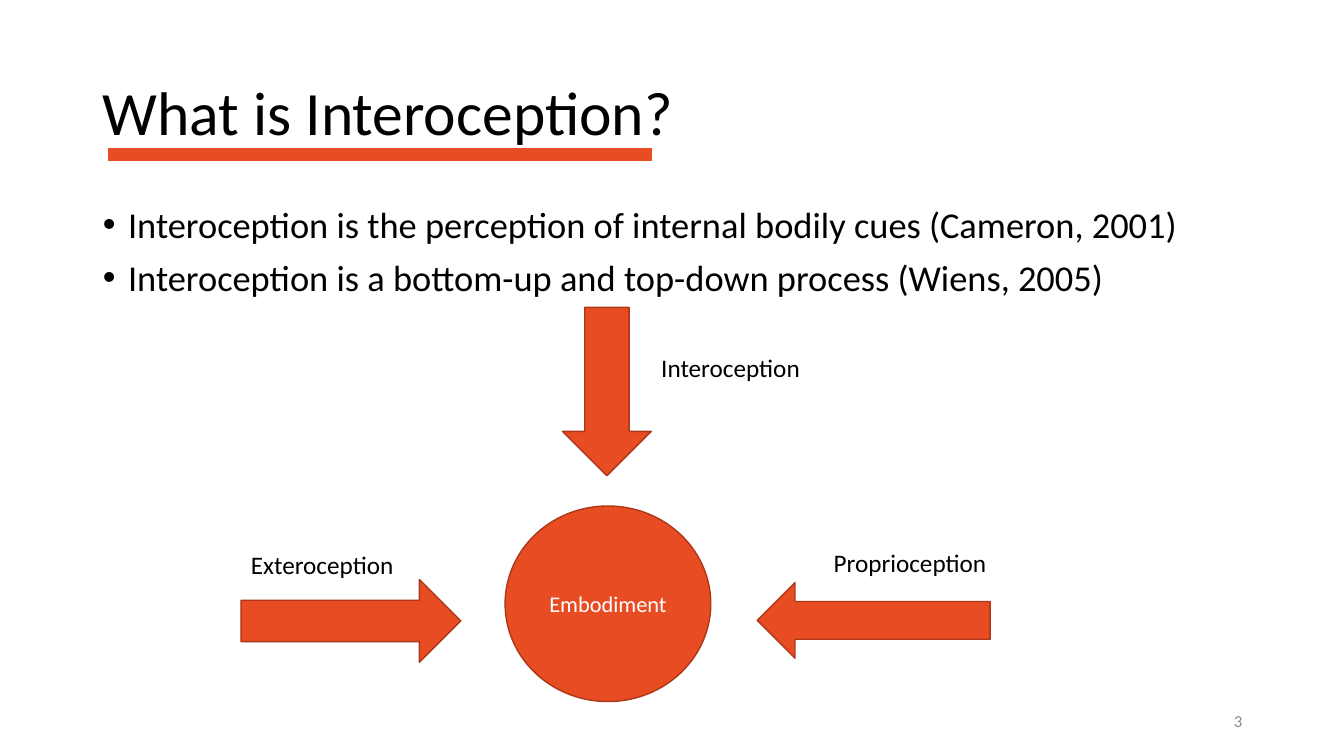
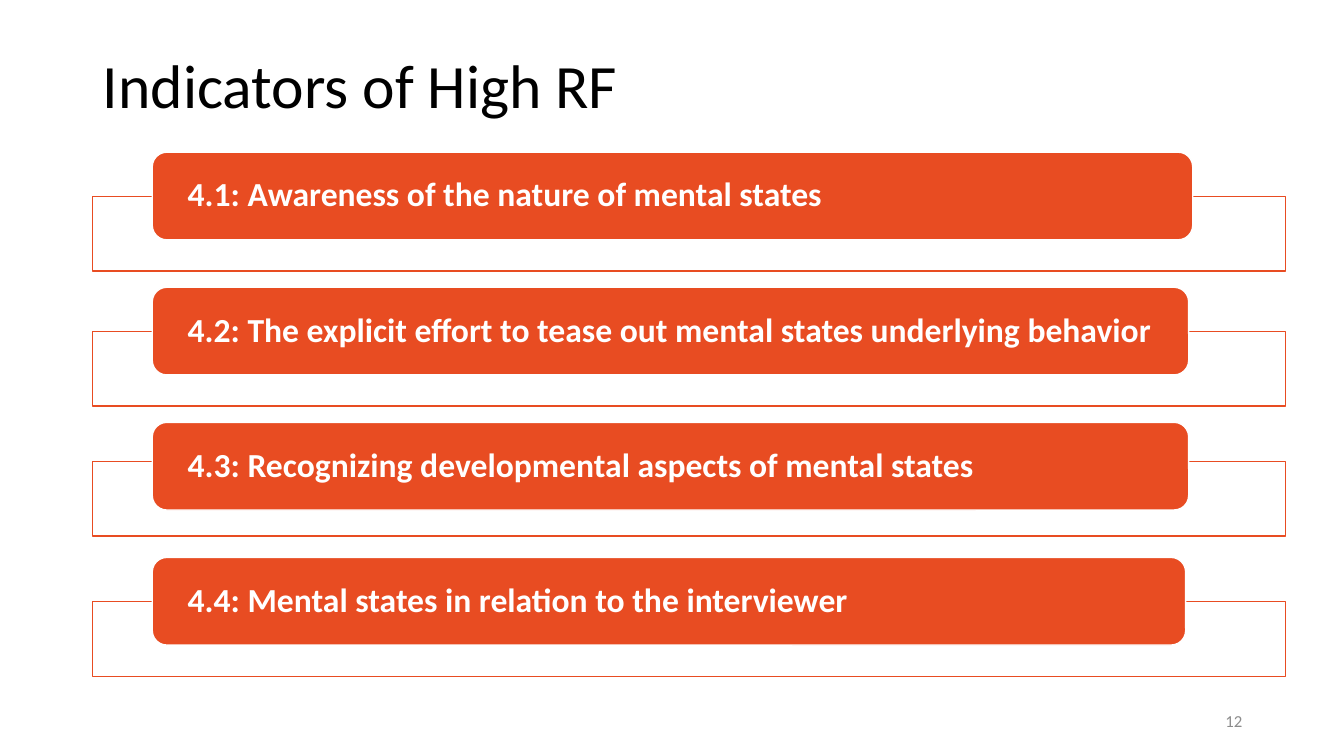
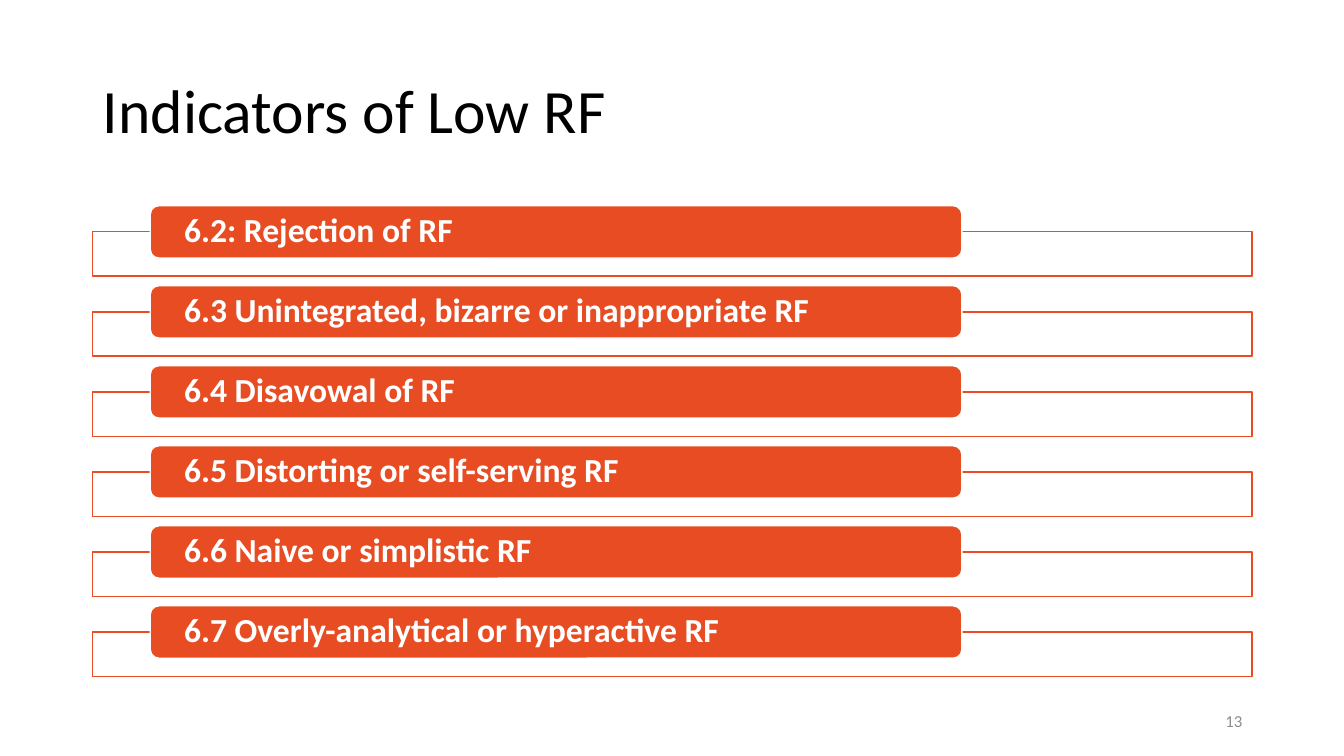
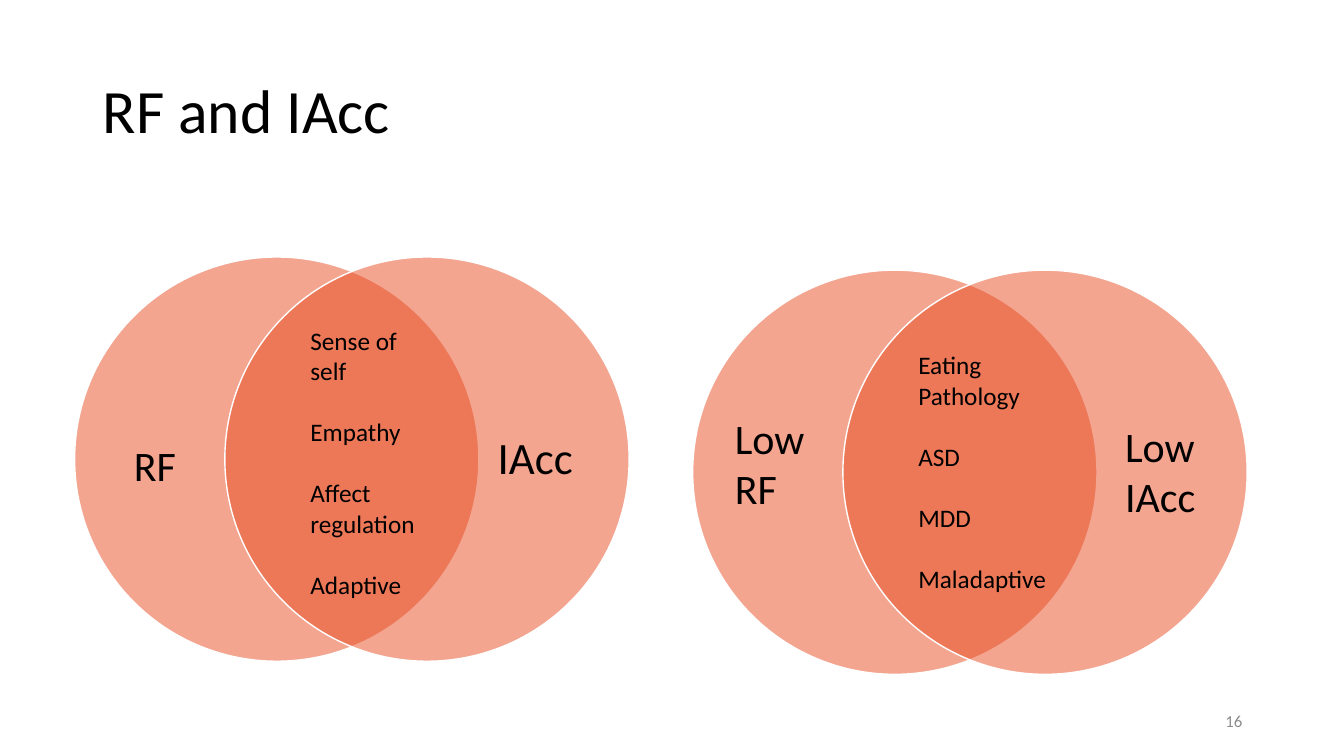
import pptx
import pptx.dml.color
import pptx.enum.shapes
import pptx.enum.text
import pptx.oxml.ns
import pptx.util
from lxml import etree

Inches = pptx.util.Inches
Pt = pptx.util.Pt
Shape = pptx.enum.shapes.MSO_SHAPE
Align = pptx.enum.text.PP_ALIGN
Anchor = pptx.enum.text.MSO_ANCHOR
qn = pptx.oxml.ns.qn


def color(value):
    return pptx.dml.color.RGBColor.from_string(value)


class Deck:
    FONT = "Calibri"
    ACCENT = "E84C22"
    EDGE = "AC3819"
    BLACK = "000000"
    WHITE = "FFFFFF"
    GRAY = "8C8C8C"
    TITLE_ONLY = 5
    TITLE_AND_BODY = 1

    def __init__(self):
        self.presentation = pptx.Presentation()
        self.presentation.slide_width = Inches(13.33)
        self.presentation.slide_height = Inches(7.5)
        self.slide = None

    def new_slide(self, title, number, title_top=0.4, layout=TITLE_ONLY):
        layouts = self.presentation.slide_layouts
        self.slide = self.presentation.slides.add_slide(layouts[layout])
        shape = self.slide.shapes.title
        self.place(shape, 0.92, title_top, 11.5, 1.45)
        self.set_text(shape, [title], 44, anchor=Anchor.MIDDLE, line_spacing=0.9)
        self.text([str(number)], 9.42, 6.95, 3, 0.4, 12, font_color=self.GRAY,
                  align=Align.RIGHT, anchor=Anchor.MIDDLE)

    def place(self, shape, left, top, width, height):
        shape.left, shape.top = Inches(left), Inches(top)
        shape.width, shape.height = Inches(width), Inches(height)

    def set_text(self, shape, lines, size, font_color=BLACK, bold=False,
                 align=Align.LEFT, anchor=Anchor.TOP, line_spacing=1.0,
                 space_before=0, space_after=0):
        frame = shape.text_frame
        frame.text = "\n".join(lines)
        frame.word_wrap = True
        frame.auto_size = pptx.enum.text.MSO_AUTO_SIZE.NONE
        frame.vertical_anchor = anchor
        for paragraph in frame.paragraphs:
            paragraph.alignment = align
            paragraph.line_spacing = line_spacing
            paragraph.space_before = Pt(space_before)
            paragraph.space_after = Pt(space_after)
            for run in paragraph.runs:
                run.font.name = self.FONT
                run.font.size = Pt(size)
                run.font.bold = bold
                run.font.color.rgb = color(font_color)

    def text(self, lines, left, top, width, height, size, **style):
        box = self.slide.shapes.add_textbox(
            Inches(left), Inches(top), Inches(width), Inches(height))
        self.set_text(box, lines, size, **style)

    def bullets(self, lines, left, top, width, height, size):
        body = self.slide.placeholders[1]
        self.place(body, left, top, width, height)
        self.set_text(body, lines, size, line_spacing=0.9, space_before=10)
        for paragraph in body.text_frame.paragraphs:
            properties = paragraph._p.get_or_add_pPr()
            properties.set("marL", str(Inches(0.25)))
            properties.set("indent", str(-Inches(0.25)))
            etree.SubElement(properties, qn("a:buChar")).set("char", "•")

    def shape(self, kind, left, top, width, height, fill=ACCENT, line=EDGE, opacity=100):
        shape = self.slide.shapes.add_shape(
            kind, Inches(left), Inches(top), Inches(width), Inches(height))
        shape.shadow.inherit = False
        shape.fill.solid()
        shape.fill.fore_color.rgb = color(fill)
        shape.line.color.rgb = color(line)
        shape.line.width = Pt(1)
        if opacity < 100:
            fill_color = shape._element.spPr.find(qn("a:solidFill"))[0]
            etree.SubElement(fill_color, qn("a:alpha")).set("val", str(opacity * 1000))
        return shape

    def rule(self, left, top, right, width):
        connector = self.slide.shapes.add_connector(
            pptx.enum.shapes.MSO_CONNECTOR.STRAIGHT,
            Inches(left), Inches(top), Inches(right), Inches(top))
        connector.line.color.rgb = color(self.ACCENT)
        connector.line.width = Pt(width)
        etree.SubElement(connector._element.spPr, qn("a:effectLst"))

    def indicators(self, rows, first_top, last_top, bar_left, bar_height,
                   frame_width, frame_height):
        pitch = (last_top - first_top) / (len(rows) - 1)
        for index, (label, bar_width, frame_drop) in enumerate(rows):
            top = first_top + index * pitch
            self.shape(Shape.RECTANGLE, 0.92, top + frame_drop, frame_width, frame_height,
                       fill=self.WHITE, line=self.ACCENT, opacity=90)
            bar = self.shape(Shape.ROUNDED_RECTANGLE, bar_left, top, bar_width,
                             bar_height, line=self.WHITE)
            self.set_text(bar, [label], 24, font_color=self.WHITE, bold=True,
                          anchor=Anchor.MIDDLE, line_spacing=0.9)
            frame = bar.text_frame
            frame.margin_left, frame.margin_right = Inches(0.31), Inches(0.1)
            frame.margin_top = frame.margin_bottom = 0

    def venn(self, left, top):
        for offset in (0, 1.49):
            self.shape(Shape.OVAL, left + offset, top, 4.01, 4.01,
                       line=self.WHITE, opacity=50)


def interoception(deck):
    deck.new_slide("What is Interoception?", 3, title_top=0.42, layout=deck.TITLE_AND_BODY)
    deck.bullets([
        "Interoception is the perception of internal bodily cues (Cameron, 2001)",
        "Interoception is a bottom-up and top-down process (Wiens, 2005)",
    ], 0.92, 2, 11.34, 2.11, 26)
    deck.rule(1.07, 1.53, 6.47, 9)
    circle = deck.shape(Shape.OVAL, 5.01, 5.02, 2.04, 1.94)
    deck.set_text(circle, ["Embodiment"], 16, font_color=deck.WHITE,
                  align=Align.CENTER, anchor=Anchor.MIDDLE)
    deck.shape(Shape.RIGHT_ARROW, 2.39, 5.75, 2.18, 0.82)
    deck.shape(Shape.LEFT_ARROW, 7.51, 5.78, 2.31, 0.75)
    deck.shape(Shape.DOWN_ARROW, 5.58, 3.05, 0.88, 1.67)
    for label, left, top in (("Interoception", 6.46, 3.45),
                             ("Exteroception", 2.39, 5.4),
                             ("Proprioception", 8.17, 5.38)):
        deck.text([label], left, top, 1.9, 0.4, 18)


def high_indicators(deck):
    deck.new_slide("Indicators of High RF", 12, title_top=0.15)
    deck.indicators([
        ("4.1: Awareness of the nature of mental states", 10.32, 0.44),
        ("4.2: The explicit effort to tease out mental states underlying behavior", 10.28, 0.44),
        ("4.3: Recognizing developmental aspects of mental states", 10.28, 0.39),
        ("4.4: Mental states in relation to the interviewer", 10.25, 0.44),
    ], 1.51, 5.53, 1.51, 0.87, 11.83, 0.74)


def low_indicators(deck):
    deck.new_slide("Indicators of Low RF", 13)
    labels = [
        "6.2: Rejection of RF",
        "6.3 Unintegrated, bizarre or inappropriate RF",
        "6.4 Disavowal of RF",
        "6.5 Distorting or self-serving RF",
        "6.6 Naive or simplistic RF",
        "6.7 Overly-analytical or hyperactive RF",
    ]
    deck.indicators([(label, 8.05, 0.26) for label in labels],
                    2.04, 6.01, 1.49, 0.52, 11.5, 0.44)


def overlaps(deck):
    deck.new_slide("RF and IAcc", 16)
    deck.venn(0.74, 2.55)
    deck.text(["IAcc"], 4.66, 4.21, 1.3, 0.7, 32, align=Align.CENTER,
              anchor=Anchor.MIDDLE, line_spacing=0.9)
    deck.text(["RF"], 1.23, 4.31, 0.9, 0.61, 30)
    deck.text(["Sense of self", "Empathy", "Affect regulation", "Adaptive"],
              2.98, 3.18, 1.42, 2.83, 18, space_after=22)
    deck.venn(6.87, 2.68)
    deck.text(["Eating Pathology", "ASD", "MDD", "Maladaptive"],
              9.01, 3.42, 1.69, 2.52, 18, space_after=22)
    deck.text(["Low RF"], 7.19, 4.04, 1.04, 1.11, 30)
    deck.text(["Low IAcc"], 11.06, 4.12, 1.04, 1.11, 30)


def main():
    deck = Deck()
    for build in (interoception, high_indicators, low_indicators, overlaps):
        build(deck)
    deck.presentation.save("out.pptx")


if __name__ == "__main__":
    main()
